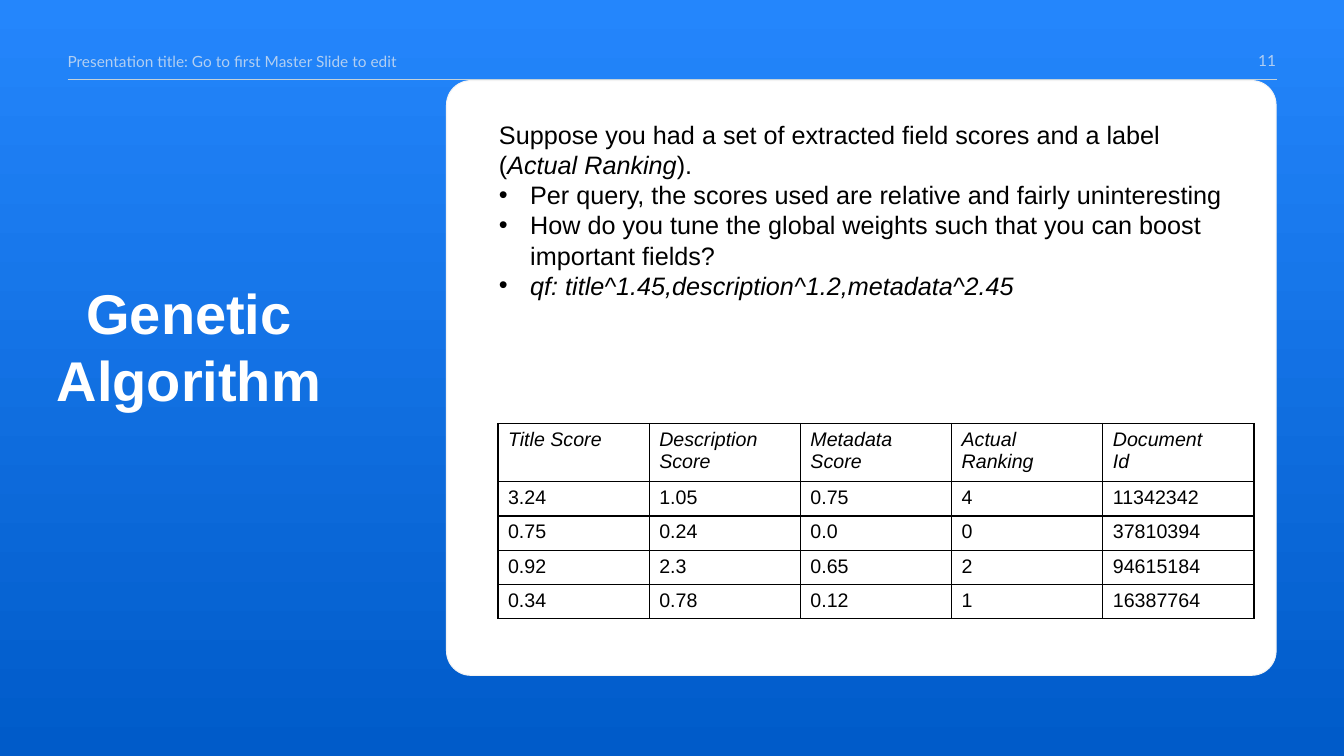
from lxml.etree import SubElement as Sub
from pptx import Presentation
from pptx.dml.color import RGBColor
from pptx.enum.shapes import MSO_CONNECTOR as Link, MSO_SHAPE as Shape
from pptx.enum.text import MSO_ANCHOR as Anchor, MSO_AUTO_SIZE as Auto, PP_ALIGN as Align
from pptx.oxml.ns import qn
from pptx.util import Inches, Pt


def tint(code):
    return RGBColor.from_string(code)


def box(*sizes):
    return [Inches(size) for size in sizes]


def write(frame, text, size=18, font="Arial", color="000000", bold=False, align=Align.LEFT,
          anchor=Anchor.TOP, inset=(0, 0, 0, 0), space=1.0, dots=False):
    """Fill a frame line by line; asterisks enclose italics and "- " starts a bullet."""
    frame.word_wrap, frame.auto_size = True, Auto.NONE
    frame.vertical_anchor = anchor
    (frame.margin_left, frame.margin_top,
     frame.margin_right, frame.margin_bottom) = box(*inset)
    for i, line in enumerate(text.split("\n")):
        para = frame.paragraphs[0] if i == 0 else frame.add_paragraph()
        para.alignment, para.line_spacing = align, space
        para.space_before = Pt(0)
        if dots:
            props = para._p.get_or_add_pPr()
            item = line.startswith("- ")
            indent = Inches(0.31) if item else 0
            props.set("marL", str(indent))
            props.set("indent", str(-indent))
            if item:
                Sub(props, qn("a:buFont")).set("typeface", "Arial")
                Sub(props, qn("a:buChar")).set("char", "•")
            else:
                Sub(props, qn("a:buNone"))
        for j, part in enumerate(line.removeprefix("- ").split("*")):
            if part:
                run = para.add_run()
                run.text = part
                run.font.name, run.font.size = font, Pt(size)
                run.font.bold, run.font.italic = bold, j % 2 == 1
                run.font.color.rgb = tint(color)


class Deck:
    def __init__(self):
        self.show = Presentation()
        self.show.slide_width, self.show.slide_height = box(13.333, 7.5)
        self.slide = self.show.slides.add_slide(self.show.slide_layouts[1])
        self.shapes = self.slide.shapes

    def back(self, *codes):
        fill = self.slide.background.fill
        fill.gradient()
        fill.gradient_angle = 270
        for stop, code in zip(fill.gradient_stops, codes):
            stop.color.rgb = tint(code)

    def rule(self, ends, color):
        line = self.shapes.add_connector(Link.STRAIGHT, *box(*ends))
        line.line.color.rgb, line.line.width = tint(color), Pt(0.75)
        Sub(line._element.spPr, qn("a:effectLst"))

    def panel(self, area, fill, edge, round_by):
        card = self.shapes.add_shape(Shape.ROUNDED_RECTANGLE, *box(*area))
        card.adjustments[0] = round_by
        card.shadow.inherit = False
        card.fill.solid()
        card.fill.fore_color.rgb = tint(fill)
        card.line.color.rgb, card.line.width = tint(edge), Pt(0.75)

    def label(self, area, text, **style):
        write(self.shapes.add_textbox(*box(*area)).text_frame, text, **style)

    def holder(self, index, area, text, **style):
        shape = self.slide.placeholders[index]
        shape.left, shape.top, shape.width, shape.height = box(*area)
        self.shapes._spTree.append(shape._element)
        write(shape.text_frame, text, **style)

    def table(self, area, rows, heights, edge):
        grid = self.shapes.add_table(len(rows), len(rows[0]), *box(*area)).table
        grid.first_row = grid.horz_banding = False
        for r, (row, height) in enumerate(zip(rows, heights)):
            grid.rows[r].height = Inches(height)
            for c, text in enumerate(row):
                cell = grid.cell(r, c)
                write(cell.text_frame, text, size=14)
                cell.margin_left = cell.margin_right = Inches(0.1)
                cell.margin_top = cell.margin_bottom = Inches(0.05)
                props = cell._tc.get_or_add_tcPr()
                for side in "LRTB":
                    line = Sub(props, qn(f"a:ln{side}"), w=str(Pt(1)))
                    paint = Sub(line, qn("a:solidFill"))
                    Sub(paint, qn("a:srgbClr"), val=edge)
                cell.fill.background()


def main():
    deck = Deck()
    deck.back("2486FC", "005BC9")
    deck.rule((0.67, 0.79, 12.67, 0.79), "C3D1DA")
    small = dict(size=11, font="Lato", color="B2CFF2", space=1.1)
    deck.label((11.76, 0.45, 0.9, 0.28), "11", align=Align.RIGHT, anchor=Anchor.MIDDLE, **small)
    deck.label((0.67, 0.45, 5.7, 0.27), "Presentation title: Go to first Master Slide to edit",
               inset=(0, 0.05, 0.1, 0.05), **small)
    deck.panel((4.43, 0.8, 8.23, 5.9), "FFFFFF", "F3F3F3", 0.041)
    deck.holder(0, (0.13, 2.73, 3.49, 1.4), "Genetic Algorithm", size=40, color="FFFFFF",
                bold=True, align=Align.CENTER, anchor=Anchor.MIDDLE)
    deck.holder(1, (4.95, 1.18, 7.32, 5),
                "Suppose you had a set of extracted field scores and a label (*Actual Ranking*).\n"
                "- Per query, the scores used are relative and fairly uninteresting\n"
                "- How do you tune the global weights such that you can boost important fields?\n"
                "- *qf: title^1.45,description^1.2,metadata^2.45*", dots=True)
    rows = [
        ("*Title Score*", "*Description Score*", "*Metadata*\n*Score*", "*Actual Ranking*",
         "*Document*\n*Id*"),
        ("3.24", "1.05", "0.75", "4", "11342342"),
        ("0.75", "0.24", "0.0", "0", "37810394"),
        ("0.92", "2.3", "0.65", "2", "94615184"),
        ("0.34", "0.78", "0.12", "1", "16387764"),
    ]
    deck.table((4.94, 4.2, 7.5, 1.94), rows, [0.58] + [0.34] * 4, "000000")
    deck.show.save("out.pptx")


if __name__ == "__main__":
    main()
